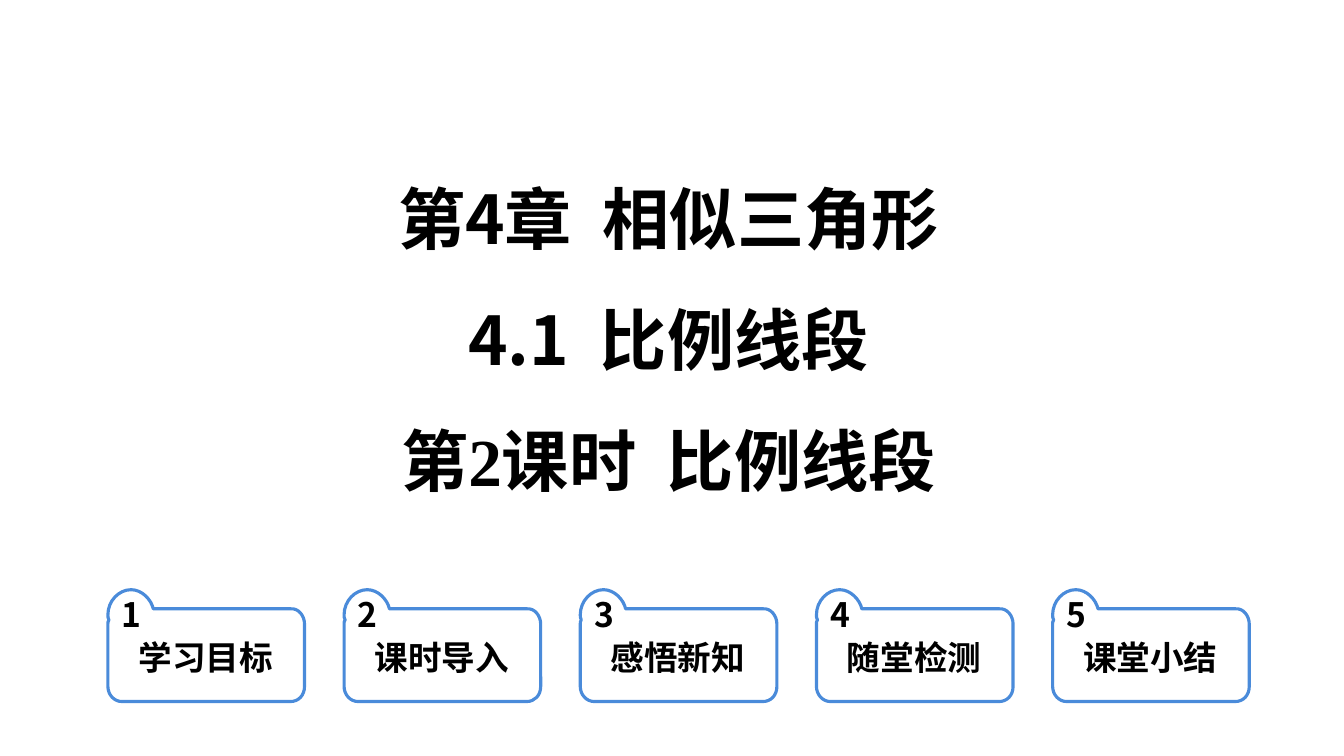
"""Build the opening slide of a lesson on proportional segments."""
from dataclasses import dataclass

import lxml.etree
import pptx
import pptx.dml.color
import pptx.enum.text
import pptx.oxml.ns
import pptx.util

Inches = pptx.util.Inches
Align = pptx.enum.text.PP_ALIGN
name = pptx.oxml.ns.qn


@dataclass(frozen=True)
class Theme:
    """Colours, fonts and type sizes of the slide."""
    ink: str = "000000"
    paper: str = "FFFFFF"
    edge: str = "4A8BDA"
    sans: str = "Noto Sans CJK SC"
    serif: str = "Times New Roman"
    title: float = 48
    label: float = 24
    line: float = 2.25


THEME = Theme()
TITLE = [
    [("第4章  相似三角形", THEME.sans)],
    [("4.1  比例线段", THEME.sans)],
    [("第2课时  ", THEME.serif), ("比例线段", THEME.sans)],
]
TABS = ["学习目标", "课时导入", "感悟新知", "随堂检测", "课堂小结"]
FIRST, LAST, TOP = 1.07, 10.44, 5.85
PITCH = (LAST - FIRST) / (len(TABS) - 1)
START = (0, 0.25)
OUTLINE = [
    [(0, 0.11), (0.11, 0), (0.23, 0)],
    [(0.34, 0), (0.43, 0.1), (0.45, 0.19)],
    [(1.81, 0.19)],
    [(1.89, 0.18), (1.95, 0.26), (1.95, 0.34)],
    [(1.95, 0.96)],
    [(1.95, 1.05), (1.89, 1.11), (1.81, 1.11)],
    [(0.14, 1.11)],
    [(0.06, 1.11), (0, 1.04), (0, 0.96)],
    [(0, 0.34)],
    [(0, 0.33), (0, 0.31), (0.01, 0.3)],
    [(0, 0.29), (0, 0.26), START],
]


def color(code):
    """Turn a hex code into a colour."""
    return pptx.dml.color.RGBColor.from_string(code)


def style(para, size, align, space=1.0):
    """Give a paragraph its bold font, alignment and spacing."""
    para.alignment = align
    para.line_spacing = space
    font = para.font
    font.size = pptx.util.Pt(size)
    font.bold = True
    font.color.rgb = color(THEME.ink)
    font.name = THEME.sans
    props = para._p.pPr.find(name("a:defRPr"))
    lxml.etree.SubElement(props, name("a:ea"), typeface=THEME.sans)


def add_title(slide):
    """Fill the title placeholder with the chapter lines."""
    title = slide.shapes.title
    title.left, title.top = Inches(3.65), Inches(1.31)
    title.width, title.height = Inches(5.96), Inches(3.74)
    frame = title.text_frame
    frame.word_wrap = False
    frame.auto_size = pptx.enum.text.MSO_AUTO_SIZE.SHAPE_TO_FIT_TEXT
    frame.vertical_anchor = pptx.enum.text.MSO_ANCHOR.TOP
    for row, parts in enumerate(TITLE):
        para = frame.add_paragraph() if row else frame.paragraphs[0]
        style(para, THEME.title, Align.CENTER, 1.5)
        for text, face in parts:
            run = para.add_run()
            run.text = text
            if face != THEME.sans:
                run.font.name = face


def bend(shape):
    """Turn the straight sides that have handles into curves."""
    sides = list(shape._element.iter(name("a:lnTo")))
    for side, part in zip(sides, OUTLINE):
        if len(part) == 3:
            curve = lxml.etree.Element(name("a:cubicBezTo"))
            for x, y in part:
                lxml.etree.SubElement(
                    curve, name("a:pt"), x=str(Inches(x)), y=str(Inches(y)))
            side.getparent().replace(side, curve)


def add_frame(shapes, left):
    """Draw one tab outline."""
    def place(point):
        return Inches(left + point[0]), Inches(TOP + point[1])

    pen = shapes.build_freeform(*place(START), scale=1.0)
    pen.add_line_segments([place(part[-1]) for part in OUTLINE], close=True)
    shape = pen.convert_to_shape()
    bend(shape)
    shape.shadow.inherit = False
    shape.fill.solid()
    shape.fill.fore_color.rgb = color(THEME.paper)
    shape.line.color.rgb = color(THEME.edge)
    shape.line.width = pptx.util.Pt(THEME.line)


def add_text(shapes, text, left, top, align):
    """Add one line of tab text."""
    box = shapes.add_textbox(
        Inches(left), Inches(top), Inches(1.86), Inches(0.5))
    frame = box.text_frame
    frame.word_wrap = True
    frame.auto_size = pptx.enum.text.MSO_AUTO_SIZE.SHAPE_TO_FIT_TEXT
    para = frame.paragraphs[0]
    para.text = text
    style(para, THEME.label, align)


def add_tab(slide, index, label):
    """Add one numbered tab as a group."""
    left = FIRST + index * PITCH
    shapes = slide.shapes.add_group_shape().shapes
    add_frame(shapes, left)
    add_text(shapes, str(index + 1), left + 0.04, 5.84, Align.LEFT)
    add_text(shapes, label, left + 0.04, 6.27, Align.CENTER)


def main():
    """Build and save the slide."""
    deck = pptx.Presentation()
    deck.slide_width, deck.slide_height = Inches(13.33), Inches(7.5)
    slide = deck.slides.add_slide(deck.slide_layouts.get_by_name("Title Only"))
    add_title(slide)
    for index, label in enumerate(TABS):
        add_tab(slide, index, label)
    deck.save("out.pptx")


if __name__ == "__main__":
    main()
